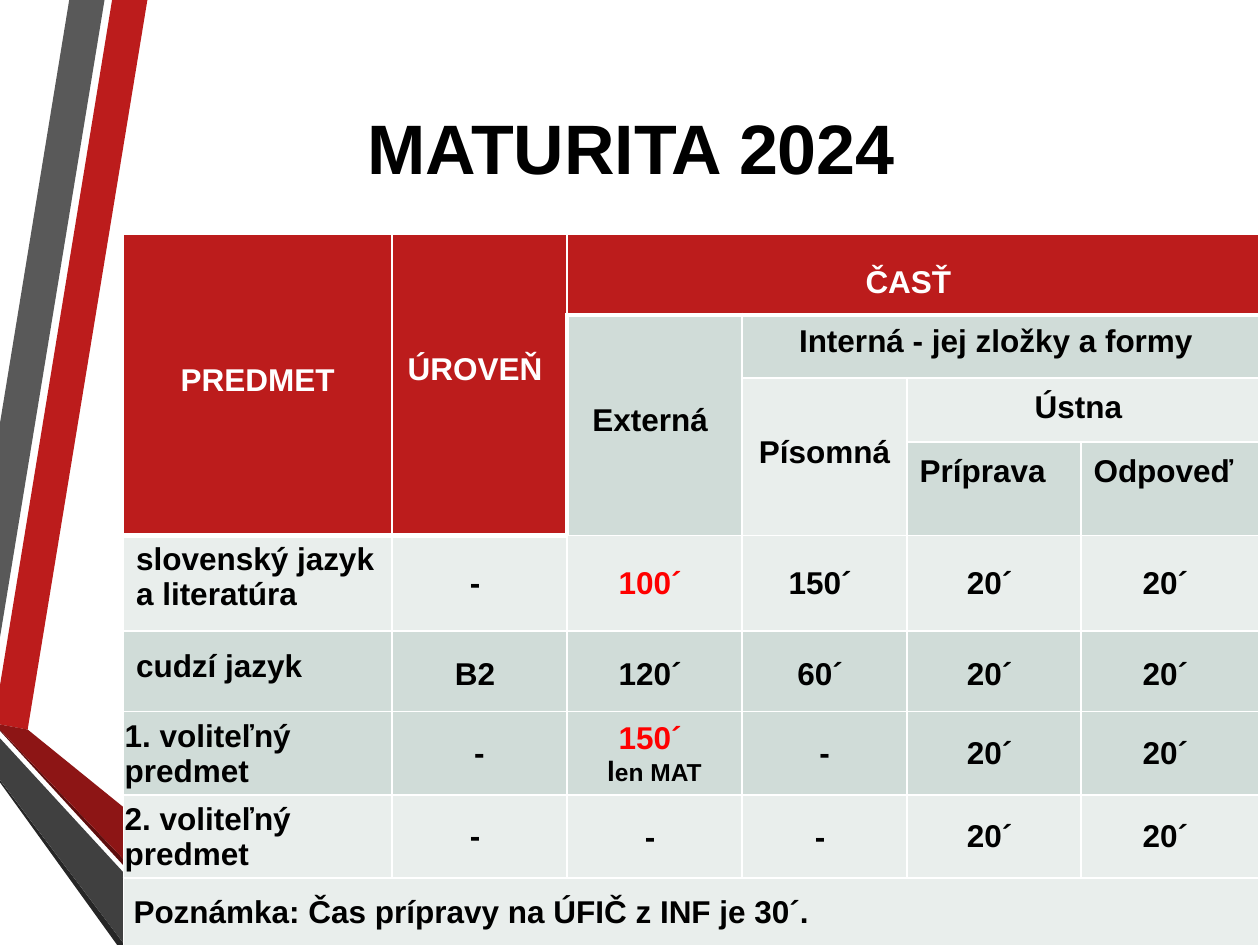
from lxml import etree
from pptx import Presentation, util as u
from pptx.dml.color import RGBColor
from pptx.enum import text
from pptx.oxml.ns import qn

RED = RGBColor(0xBC, 0x1C, 0x1C)
WHITE = RGBColor(0xFF, 0xFF, 0xFF)
BLACK = RGBColor(0, 0, 0)
ALERT = RGBColor(0xFF, 0, 0)
SAGE = RGBColor(0xD0, 0xDC, 0xD8)
MIST = RGBColor(0xE9, 0xEE, 0xEC)
GREY = RGBColor(0x59, 0x59, 0x59)
CHARCOAL = RGBColor(0x40, 0x40, 0x40)
SOOT = RGBColor(0x26, 0x26, 0x26)
MAROON = RGBColor(0x8D, 0x15, 0x15)
WINE = RGBColor(0x5E, 0x0E, 0x0E)

LEFT, CENTER = text.PP_ALIGN.LEFT, text.PP_ALIGN.CENTER
TOP, MIDDLE = text.MSO_ANCHOR.TOP, text.MSO_ANCHOR.MIDDLE

prs = Presentation()
prs.slide_width, prs.slide_height = u.Inches(10), u.Inches(7.5)
slide = prs.slides.add_slide(prs.slide_layouts[5])


def write(paragraph, runs, align=CENTER, spacing=None):
    """Fill a paragraph with (text, size, colour) runs in bold Arial."""
    paragraph.alignment = align
    if spacing:
        paragraph.line_spacing = spacing
    for words, size, color in runs:
        run = paragraph.add_run()
        run.text = words
        for key, value in dict(name="Arial", size=u.Pt(size), bold=True).items():
            setattr(run.font, key, value)
        run.font.color.rgb = color


def draw_borders(cell, heavy):
    """White lines round a cell: 3 pt on the heavy sides, 1 pt elsewhere."""
    properties = cell._tc.get_or_add_tcPr()
    for side in "LRTB":
        width = u.Pt(3 if side in heavy else 1)
        line = etree.SubElement(properties, qn("a:ln" + side), w=str(int(width)))
        fill = etree.SubElement(line, qn("a:solidFill"))
        etree.SubElement(fill, qn("a:srgbClr"), val=str(WHITE))


# Folded ribbons on the left, in hundredths of an inch
ribbons = [
    (RED, [(0, 544), (0, 575), (22, 579), (117, 0), (89, 0)]),
    (GREY, [(83, 0), (55, 0), (0, 336), (0, 506)]),
    (SOOT, [(0, 619), (0, 621), (93, 750), (99, 750)]),
    (WINE, [(0, 579), (0, 580), (156, 750), (163, 750)]),
    (MAROON, [(0, 579), (163, 750), (233, 750), (22, 579), (0, 575)]),
    (CHARCOAL, [(0, 619), (99, 750), (151, 750), (0, 586)]),
]
for color, points in ribbons:
    builder = slide.shapes.build_freeform(*points[0], scale=u.Inches(0.01))
    builder.add_line_segments(points[1:], close=True)
    ribbon = builder.convert_to_shape()
    ribbon.shadow.inherit = False
    ribbon.fill.solid()
    ribbon.fill.fore_color.rgb = color
    ribbon.line.fill.background()

# Title
title = slide.shapes.title
for key, value in dict(left=0.75, top=0.36, width=8.52, height=1.6).items():
    setattr(title, key, u.Inches(value))
title.text_frame.vertical_anchor = MIDDLE
write(title.text_frame.paragraphs[0], [("MATURITA 2024", 40, BLACK)])

# Table grid
columns = [2.13, 1.39, 1.39, 1.31, 1.38, 1.41]
rows = [0.64, 0.5, 0.51, 0.74, 0.76, 0.64, 0.66, 0.66, 0.54]
frame = slide.shapes.add_table(
    len(rows), len(columns), u.Inches(0.98), u.Inches(1.86),
    u.Inches(sum(columns)), u.Inches(sum(rows)))
exam = frame.table
for column, width in zip(exam.columns, columns):
    column.width = u.Inches(width)
for row, height in zip(exam.rows, rows):
    row.height = u.Inches(height)

# Heavy rules: under the red header cells and beside the column of external parts
heavy = {(r, c): "" for r in range(len(rows)) for c in range(len(columns))}
for c in range(len(columns)):
    edge = 4 if c < 2 else 1
    heavy[edge - 1, c] += "B"
    heavy[edge, c] += "T"
for r in range(1, 4):
    heavy[r, 1] += "R"
    heavy[r, 2] += "L"
for (r, c), sides in heavy.items():
    draw_borders(exam.cell(r, c), sides)

NORMAL = (0.1, 0.05, 0.1, 0.05)
TIGHT = (0.01, 0.01, 0.01, 0)
EXACT = u.Pt(14.9)

# Header: row, column, row span, column span, words, fill, align, anchor, spacing, margins
cells = [
    (0, 0, 4, 1, "PREDMET", RED, CENTER, MIDDLE, EXACT, NORMAL),
    (0, 1, 4, 1, "ÚROVEŇ ", RED, CENTER, MIDDLE, 1.15, (0.1, 0.05, 0.1, 0.33)),
    (0, 2, 1, 4, "ČASŤ ", RED, CENTER, MIDDLE, EXACT, (0.1, 0.25, 0.1, 0.05)),
    (1, 2, 3, 1, "Externá ", SAGE, CENTER, MIDDLE, EXACT, NORMAL),
    (1, 3, 1, 3, "Interná - jej zložky a formy ", SAGE, CENTER, MIDDLE, EXACT, NORMAL),
    (2, 3, 2, 1, "Písomná ", MIST, CENTER, MIDDLE, EXACT, NORMAL),
    (2, 4, 1, 2, "Ústna ", MIST, CENTER, TOP, 1.15, NORMAL),
    (3, 4, 1, 1, "Príprava", SAGE, LEFT, TOP, 1.15, NORMAL),
    (3, 5, 1, 1, "Odpoveď", SAGE, LEFT, TOP, 1.15, NORMAL),
]

# Subjects: fill, spacing, name anchor, name margins, part margins, words
subjects = [
    (MIST, None, TOP, NORMAL, NORMAL,
     ["slovenský jazyk\na literatúra", "- ", "100´ ", "150´ ", "20´ ", "20´ "]),
    (SAGE, 1.15, MIDDLE, NORMAL, NORMAL,
     ["cudzí jazyk", "B2 ", "120´ ", "60´ ", "20´ ", "20´ "]),
    (SAGE, None, MIDDLE, TIGHT, TIGHT,
     ["1. voliteľný predmet", "-", "150´ \nlen MAT", "-", "20´ ", "20´ "]),
    (MIST, None, MIDDLE, TIGHT, TIGHT,
     ["2. voliteľný predmet", "- ", "- ", "- ", "20´ ", "20´ "]),
]
for r, (fill, spacing, anchor, name_margins, part_margins, words) in enumerate(subjects, 4):
    name_spacing = EXACT if spacing else None
    cells.append((r, 0, 1, 1, words[0], fill, LEFT, anchor, name_spacing, name_margins))
    for c in range(1, 6):
        margins = part_margins if c in (2, 3) else NORMAL
        cells.append((r, c, 1, 1, words[c], fill, CENTER, MIDDLE, spacing, margins))

# Note across the bottom row
cells.append((8, 0, 1, 6, "Poznámka: Čas prípravy na ÚFIČ z INF je 30´.",
              MIST, LEFT, MIDDLE, None, (0.08, 0.01, 0.01, 0)))

alerts = {"100´ ", "150´ "}
for r, c, down, across, words, fill, align, anchor, spacing, margins in cells:
    cell = exam.cell(r, c)
    if down * across > 1:
        cell.merge(exam.cell(r + down - 1, c + across - 1))
    cell.fill.solid()
    cell.fill.fore_color.rgb = fill
    cell.vertical_anchor = anchor
    for side, margin in zip(("left", "top", "right", "bottom"), margins):
        setattr(cell, "margin_" + side, u.Inches(margin))
    for i, line in enumerate(words.split("\n")):
        frame_text = cell.text_frame
        paragraph = frame_text.add_paragraph() if i else frame_text.paragraphs[0]
        color = WHITE if fill == RED else BLACK
        if c == 2 and line in alerts:
            color = ALERT
        runs = [(line, 18, color)]
        if line == "len MAT":
            runs = [("l", 16, color), ("en MAT", 14, color)]
        write(paragraph, runs, align, spacing)

prs.save("out.pptx")
